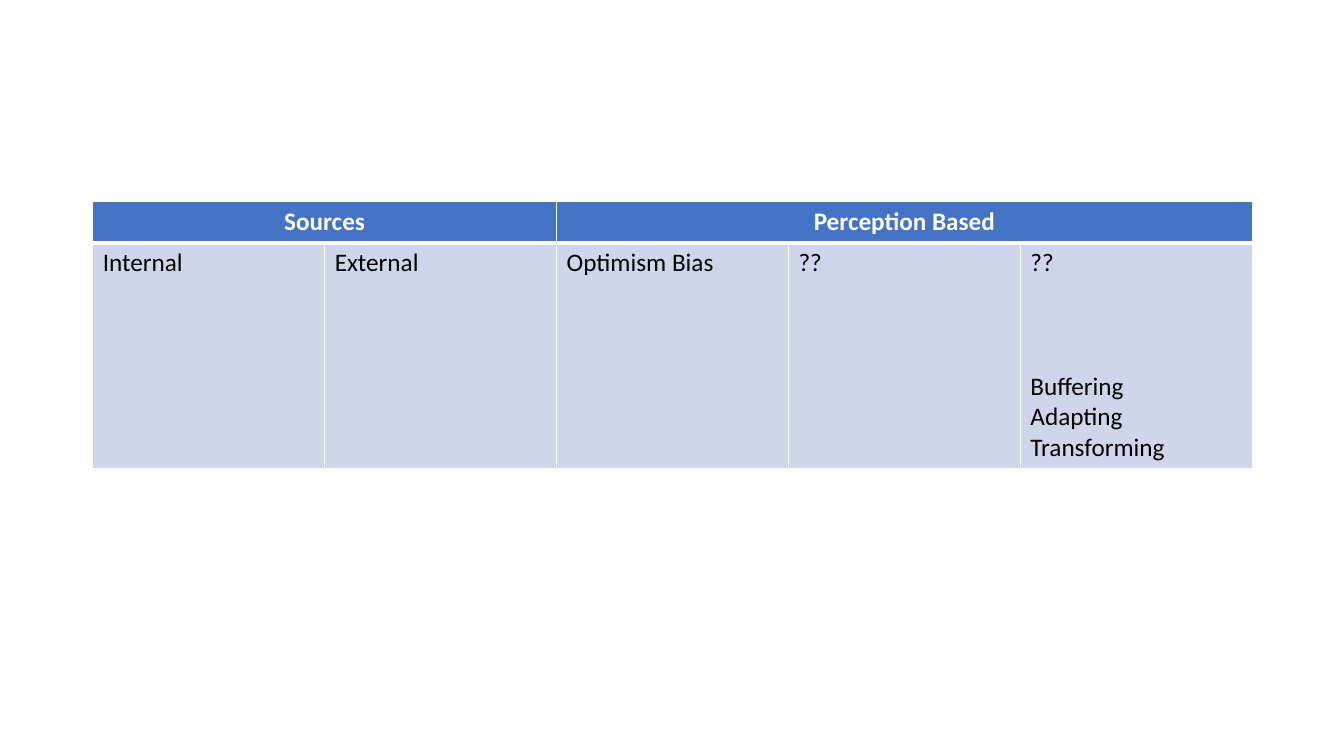
"""Build a slide with a table of sources and perception-based factors."""
import pptx
import pptx.dml.color
import pptx.enum.text
import pptx.oxml
import pptx.oxml.ns
import pptx.util
from pptx.util import Inches

WHITE = pptx.dml.color.RGBColor(0xFF, 0xFF, 0xFF)
BLACK = pptx.dml.color.RGBColor(0x00, 0x00, 0x00)
BLUE = pptx.dml.color.RGBColor(0x44, 0x72, 0xC4)
PALE = pptx.dml.color.RGBColor(0xCF, 0xD5, 0xEA)

HEADS = [(0, 1, "Sources"), (2, 4, "Perception Based")]
ITEMS = [
    ["Internal"],
    ["External"],
    ["Optimism Bias"],
    ["??"],
    ["??", "Buffering", "Adapting", "Transforming"],
]
HEIGHTS = [0.41, 2.2]
WIDTH = 2.3
GAP = 66


def edge(cell, top, base):
    props = cell._tc.get_or_add_tcPr()
    sides = [("L", 1), ("R", 1), ("T", top), ("B", base)]
    for place, (side, size) in enumerate(sides):
        line = pptx.oxml.parse_xml(
            f'<a:ln{side} {pptx.oxml.ns.nsdecls("a")} w="{pptx.util.Pt(size)}">'
            f'<a:solidFill><a:srgbClr val="{WHITE}"/></a:solidFill></a:ln{side}>'
        )
        props.insert(place, line)


def paint(cell, fill, top, base):
    cell.fill.solid()
    cell.fill.fore_color.rgb = fill
    edge(cell, top, base)


def write(cell, lines, color, bold, align):
    cell.text = "\n".join(lines)
    for para in cell.text_frame.paragraphs:
        para.alignment = align
        para.font.name = "Calibri"
        para.font.size = pptx.util.Pt(18)
        para.font.bold = bold
        para.font.color.rgb = color


def add_grid(slide):
    count = len(ITEMS)
    frame = slide.shapes.add_table(
        len(HEIGHTS), count, Inches(0.92), Inches(2),
        Inches(WIDTH * count), Inches(sum(HEIGHTS)),
    )
    grid = frame.table
    grid.horz_banding = False
    for row, height in zip(grid.rows, HEIGHTS):
        row.height = Inches(height)
    for col, lines in enumerate(ITEMS):
        grid.columns[col].width = Inches(WIDTH)
        paint(grid.cell(0, col), BLUE, 1, 3)
        cell = grid.cell(1, col)
        paint(cell, PALE, 3, 1)
        write(cell, lines, BLACK, False, pptx.enum.text.PP_ALIGN.LEFT)
    for first, last, text in HEADS:
        cell = grid.cell(0, first)
        cell.merge(grid.cell(0, last))
        write(cell, [text], WHITE, True, pptx.enum.text.PP_ALIGN.CENTER)
    lower = grid.cell(1, count - 1).text_frame.paragraphs[1]
    lower.space_before = pptx.util.Pt(GAP)


def main():
    deck = pptx.Presentation()
    deck.slide_width = Inches(13.33)
    deck.slide_height = Inches(7.5)
    slide = deck.slides.add_slide(deck.slide_layouts[6])
    add_grid(slide)
    deck.save("out.pptx")


if __name__ == "__main__":
    main()
